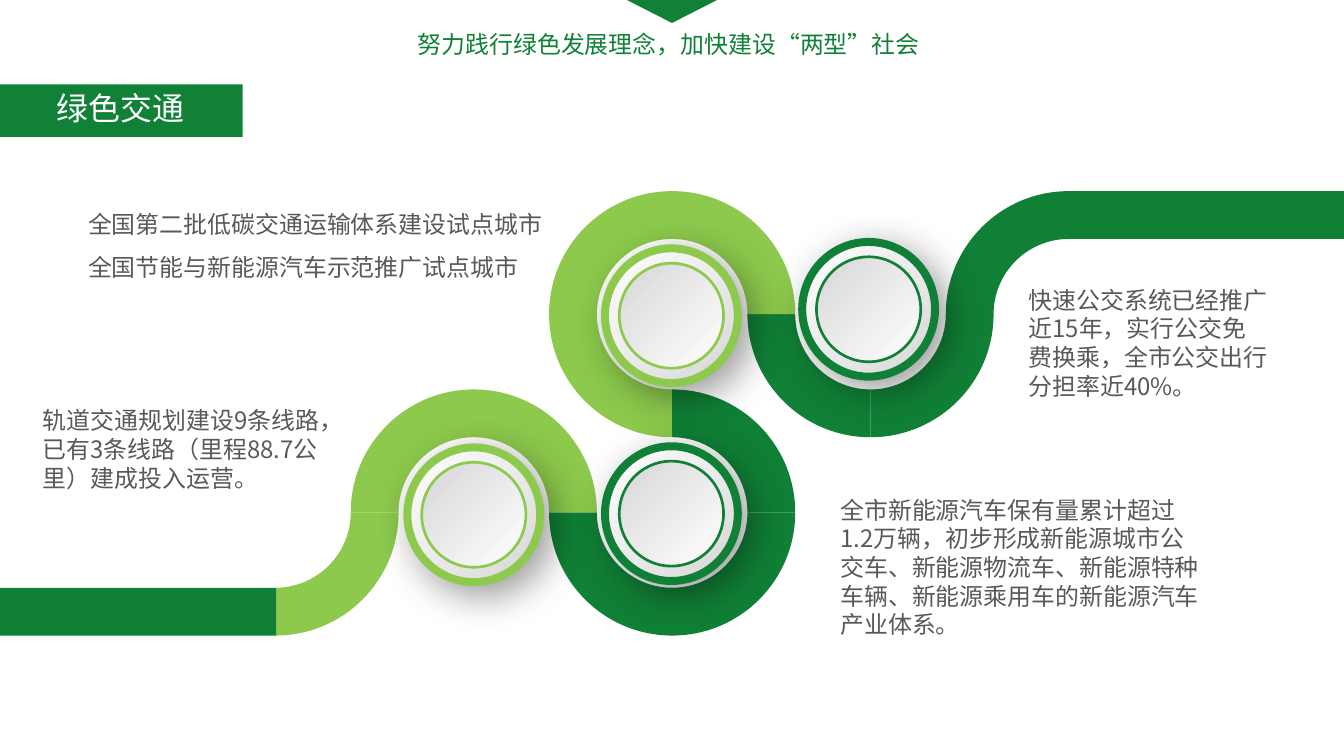
"""Build the green transport slide: a winding road with four dials and captions."""
import math

import pptx
import pptx.dml.color
import pptx.enum.shapes
import pptx.enum.text
import pptx.oxml
import pptx.oxml.ns
import pptx.util

Cm, Pt = pptx.util.Cm, pptx.util.Pt
qn, nsdecls = pptx.oxml.ns.qn, pptx.oxml.ns.nsdecls
SHAPE = pptx.enum.shapes.MSO_SHAPE
ALIGN = pptx.enum.text.PP_ALIGN
FIT = pptx.enum.text.MSO_AUTO_SIZE

FONT = "Noto Sans CJK SC"
COLORS = {"dark": "108036", "light": "8CC94C", "banner": "108136", "text": "595959",
          "white": "FFFFFF", "silver": "D7D7D7", "shadow": "000000"}
SLIDE_W, SLIDE_H = 35.71, 20.09

TITLE = "绿色交通"
TITLE_BOX = (1.26, 2.23, 5.66, 1.28)
BANNER_BOX = (0, 2.24, 6.45, 1.4)
HEADER = "努力践行绿色发展理念，加快建设“两型”社会"
HEADER_BOX = (7.67, 0.66, 20.19, 1.02)
CAPTIONS = [
    (["快速公交系统已经推广近15年，实行公交免费换乘，全市公交出行分担率近40%。"],
     (27.05, 7.46, 6.93, 3.35), {}),
    (["全国第二批低碳交通运输体系建设试点城市", "全国节能与新能源汽车示范推广试点城市"],
     (2.06, 5.07, 13.21, 2.44), {"line_spacing": 1.5}),
    (["全市新能源汽车保有量累计超过1.2万辆，初步形成新能源城市公交车、新能源物流车、"
      "新能源特种车辆、新能源乘用车的新能源汽车产业体系。"],
     (22.05, 13.04, 10.21, 4.11), {}),
    (["轨道交通规划建设9条线路，已有3条线路（里程88.7公里）建成投入运营。"],
     (0.86, 10.66, 8.35, 2.59), {}),
]

NODE_X, NODE_Y, PITCH = 7.32, 8.35, 5.27
OUTER_R, INNER_R = 3.27, 2
CURVE = 0.5523
QUADRANTS = {"BR": 0, "BL": 90, "TL": 180, "TR": 270}
BENDS = [
    (4, 0, ["TL"], "dark"),
    (3, 0, ["BR", "BL"], "dark"),
    (2, 0, ["TR", "TL", "BL"], "light"),
    (2, 1, ["TR", "BR", "BL"], "dark"),
    (1, 1, ["TR", "TL"], "light"),
    (0, 1, ["BR"], "light"),
]
DIALS = [
    (12.59, 13.68, "light"),
    (17.84, 13.65, "dark"),
    (17.84, 8.39, "light"),
    (23.08, 8.22, "dark"),
]
DIAL_RINGS = [(3.53, 3.58, 6, 315), (2.77, 2.79, 2, 135)]


def rgb(name):
    return pptx.dml.color.RGBColor.from_string(COLORS[name])


def paint(sp, color):
    sp.shadow.inherit = False
    sp.fill.solid()
    sp.fill.fore_color.rgb = rgb(color)
    sp.line.fill.background()


def add_block(s, shape, box, color):
    sp = s.shapes.add_shape(shape, *map(Cm, box))
    paint(sp, color)
    return sp


def write(tf, lines, size, color, para_format, frame_format):
    tf.word_wrap = True
    for key, value in frame_format.items():
        setattr(tf, key, value)
    for i, line in enumerate(lines):
        p = tf.paragraphs[0] if i == 0 else tf.add_paragraph()
        for key, value in para_format.items():
            setattr(p, key, value)
        r = p.add_run()
        r.text = line
        for key, value in {"name": FONT, "size": Pt(size), "bold": False}.items():
            setattr(r.font, key, value)
        r.font.color.rgb = rgb(color)
        ea = pptx.oxml.parse_xml(f'<a:ea {nsdecls("a")} typeface="{FONT}"/>')
        r.font._element.find(qn("a:latin")).addnext(ea)


def add_text(s, lines, box, color, para_format, side_margin):
    tb = s.shapes.add_textbox(*map(Cm, box))
    write(tb.text_frame, lines, 18, color, para_format,
          {"margin_left": Cm(side_margin), "margin_right": Cm(side_margin),
           "auto_size": FIT.SHAPE_TO_FIT_TEXT})


def add_bend(s, cx, cy, start, color):
    a = math.radians(start)
    ux, uy = math.cos(a), math.sin(a)
    quarter = [(1, 0), (1, CURVE), (CURVE, 1), (0, 1)]
    outline = [(OUTER_R, q) for q in quarter] + [(INNER_R, q) for q in reversed(quarter)]
    points = [(Cm(cx + r * (u * ux - v * uy)), Cm(cy + r * (u * uy + v * ux)))
              for r, (u, v) in outline]
    builder = s.shapes.build_freeform(*points[0])
    builder.add_line_segments(points[1:], close=True)
    sp = builder.convert_to_shape()
    lines = list(sp._element.iter(qn("a:lnTo")))
    for first in (0, 4):
        arc = pptx.oxml.parse_xml(f'<a:cubicBezTo {nsdecls("a")}/>')
        lines[first].addprevious(arc)
        for line in lines[first:first + 3]:
            arc.append(line[0])
            line.getparent().remove(line)
    paint(sp, color)


def add_dial(s, cx, cy, color):
    group = s.shapes.add_group_shape()
    for i, (w, h, weight, angle) in enumerate(DIAL_RINGS):
        sp = group.shapes.add_shape(
            SHAPE.OVAL, Cm(cx - w / 2), Cm(cy - h / 2), Cm(w), Cm(h))
        sp.shadow.inherit = False
        sp.fill.gradient()
        sp.fill.gradient_angle = angle
        for stop, name in zip(sp.fill.gradient_stops, ("white", "silver")):
            stop.color.rgb = rgb(name)
        sp.line.color.rgb = rgb(color)
        sp.line.width = Pt(weight)
        if i == 0:
            effects = sp._element.spPr.find(qn("a:effectLst"))
            effects.append(pptx.oxml.parse_xml(
                f'<a:outerShdw {nsdecls("a")} blurRad="{Pt(30)}" dist="{Pt(10)}"'
                f' dir="2700000" algn="tl" rotWithShape="0"><a:srgbClr val="{COLORS["shadow"]}">'
                '<a:alpha val="40000"/></a:srgbClr></a:outerShdw>'))


def add_title(s):
    add_block(s, SHAPE.RECTANGLE, BANNER_BOX, "banner")
    title = s.shapes.title
    for key, value in zip(("left", "top", "width", "height"), TITLE_BOX):
        setattr(title, key, Cm(value))
    write(title.text_frame, [TITLE], 24, "white", {"alignment": ALIGN.LEFT},
          {"vertical_anchor": pptx.enum.text.MSO_ANCHOR.TOP, "auto_size": FIT.NONE})
    title._element.getparent().append(title._element)


def main():
    prs = pptx.Presentation()
    prs.slide_width, prs.slide_height = Cm(SLIDE_W), Cm(SLIDE_H)
    s = prs.slides.add_slide(prs.slide_layouts[5])

    for col, row, quadrants, color in BENDS:
        for quadrant in quadrants:
            add_bend(s, NODE_X + col * PITCH, NODE_Y + row * PITCH, QUADRANTS[quadrant], color)
    band = OUTER_R - INNER_R
    exit_x = NODE_X + 4 * PITCH
    add_block(s, SHAPE.RECTANGLE, (exit_x, NODE_Y - OUTER_R, SLIDE_W - exit_x, band), "dark")
    add_block(s, SHAPE.RECTANGLE, (0, NODE_Y + PITCH + INNER_R, NODE_X + 0.02, band), "dark")

    for cx, cy, color in DIALS:
        add_dial(s, cx, cy, color)

    pointer = add_block(s, SHAPE.ISOSCELES_TRIANGLE, (16.56, -0.05, 2.59, 0.66), "banner")
    pointer.rotation = 180
    add_text(s, [HEADER], HEADER_BOX, "banner", {"alignment": ALIGN.CENTER}, 0.25)
    for lines, box, para_format in CAPTIONS:
        add_text(s, lines, box, "text", para_format, 0.28)
    add_title(s)
    prs.save("out.pptx")


if __name__ == "__main__":
    main()
